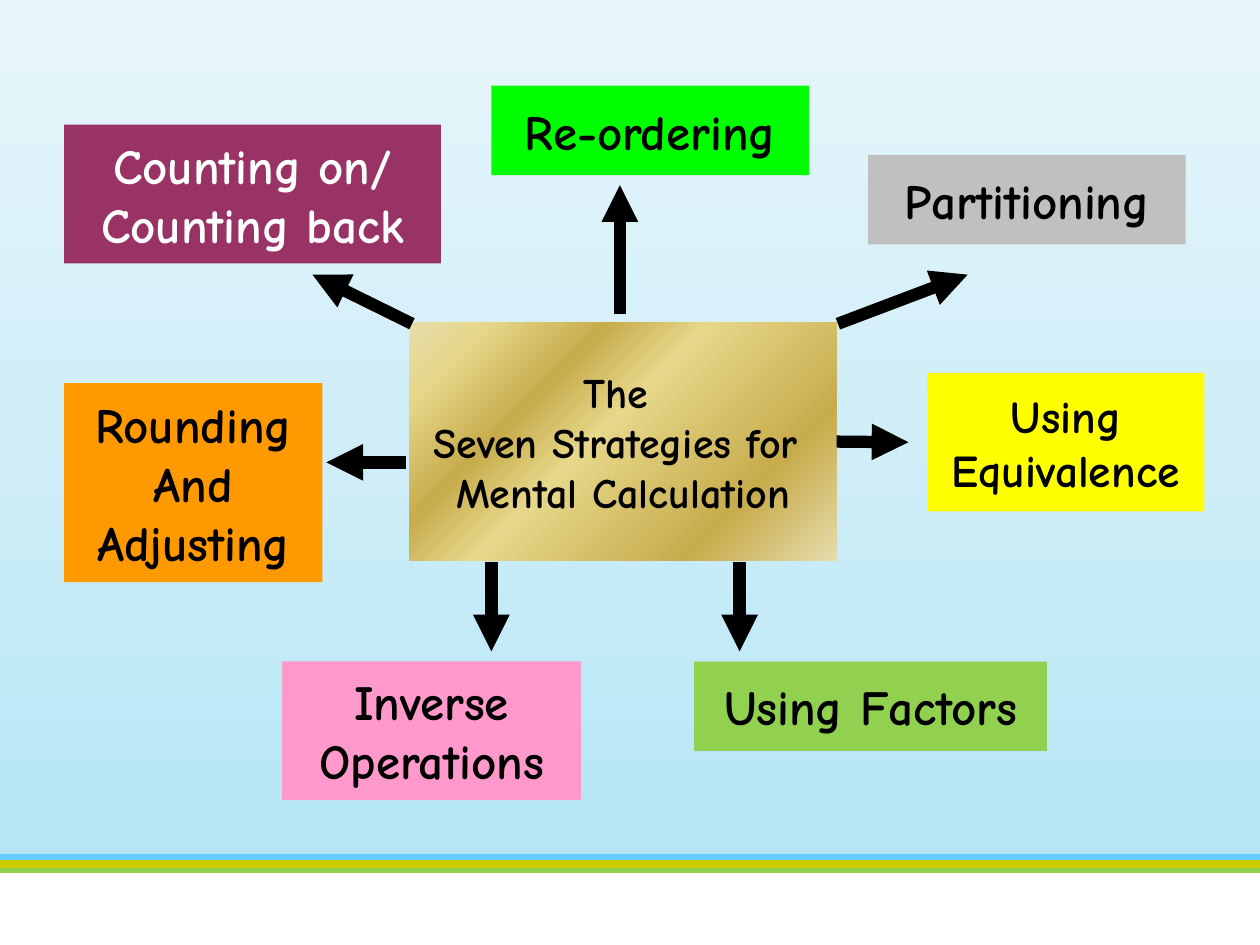
from lxml.etree import SubElement
from pptx import Presentation
from pptx.dml.color import RGBColor
from pptx.enum.shapes import MSO_CONNECTOR, MSO_SHAPE
from pptx.enum.text import MSO_ANCHOR, MSO_AUTO_SIZE, PP_ALIGN
from pptx.oxml.ns import qn
from pptx.util import Inches, Pt

BLACK = RGBColor(0x00, 0x00, 0x00)
WHITE = RGBColor(0xFF, 0xFF, 0xFF)
LEAF = RGBColor(0x92, 0xD0, 0x50)
SKY = RGBColor(0x66, 0xCC, 0xFF)
OLIVE = RGBColor(0xCC, 0xCC, 0x00)
PINK = RGBColor(0xFF, 0x99, 0xCC)
PLUM = RGBColor(0x99, 0x33, 0x66)
GREEN = RGBColor(0x00, 0xFF, 0x00)
ORANGE = RGBColor(0xFF, 0x99, 0x00)
SILVER = RGBColor(0xC0, 0xC0, 0xC0)
YELLOW = RGBColor(0xFF, 0xFF, 0x00)
PALE_GOLD = RGBColor(0xE6, 0xDC, 0xAC)
LIGHT_GOLD = RGBColor(0xE6, 0xD7, 0x8A)
DARK_GOLD = RGBColor(0xC7, 0xAC, 0x4C)

SKY_STOPS = [(0, RGBColor(0xB5, 0xE6, 0xF5)), (50, RGBColor(0xD0, 0xEE, 0xF8)),
             (100, RGBColor(0xE8, 0xF6, 0xFB))]
GOLD_STOPS = [(0, PALE_GOLD), (12, LIGHT_GOLD), (30, DARK_GOLD),
              (45, LIGHT_GOLD), (77, DARK_GOLD), (100, PALE_GOLD)]

# text, (left, top, width, height), fill, font colour, size
STRATEGIES = [
    ("Using Factors", (5.51, 5.25, 2.8, 0.71), LEAF, BLACK, 28),
    ("Inverse Operations", (2.24, 5.25, 2.37, 1.1), PINK, BLACK, 28),
    ("Counting on/\vCounting back", (0.51, 0.99, 2.99, 1.1), PLUM, WHITE, 28),
    ("Re-ordering", (3.9, 0.68, 2.52, 0.71), GREEN, BLACK, 28),
    ("Rounding\vAnd\vAdjusting", (0.51, 3.04, 2.05, 1.58), ORANGE, BLACK, 28),
    ("Partitioning", (6.89, 1.23, 2.52, 0.71), SILVER, BLACK, 28),
    ("Using\vEquivalence", (7.36, 2.96, 2.2, 1.1), YELLOW, BLACK, 26),
]
ARROWS = [
    ((5.87, 4.46), (5.87, 5.17)),
    ((3.9, 4.46), (3.9, 5.17)),
    ((3.27, 2.57), (2.48, 2.18)),
    ((3.22, 3.67), (2.59, 3.67)),
    ((4.92, 2.49), (4.92, 1.47)),
    ((6.65, 2.57), (7.68, 2.18)),
]
EQUIVALENCE_ARROW = ((6.64, 3.51), (7.21, 3.51))
STRIPES = [(6.9, LEAF), (6.81, SKY), (6.86, OLIVE)]


def set_gradient(shape, stops, angle):
    """Fill with (percent, colour) stops; angle is clockwise in degrees."""
    shape.fill.gradient()
    shape.fill.gradient_angle = 360 - angle
    stop_list = shape._element.spPr.find(".//" + qn("a:gsLst"))
    for stop in list(stop_list):
        stop_list.remove(stop)
    for percent, color in stops:
        stop = SubElement(stop_list, qn("a:gs"), pos=str(percent * 1000))
        SubElement(stop, qn("a:srgbClr"), val=str(color))


def set_text(shape, text, size, color):
    frame = shape.text_frame
    frame.text = text
    frame_format = {"word_wrap": True, "auto_size": MSO_AUTO_SIZE.NONE,
                    "vertical_anchor": MSO_ANCHOR.MIDDLE}
    for name, value in frame_format.items():
        setattr(frame, name, value)
    paragraph = frame.paragraphs[0]
    paragraph.alignment = PP_ALIGN.CENTER
    font = paragraph.runs[0].font
    for run in paragraph.runs:
        font = run.font
        font_format = {"name": "Comic Neue", "size": Pt(size), "bold": True}
        for name, value in font_format.items():
            setattr(font, name, value)
        font.color.rgb = color


def add_rectangle(slide, box):
    shape = slide.shapes.add_shape(MSO_SHAPE.RECTANGLE, *map(Inches, box))
    shape.shadow.inherit = False
    shape.line.fill.background()
    return shape


def add_strategy(slide, text, box, fill, color, size):
    shape = add_rectangle(slide, box)
    shape.fill.solid()
    shape.fill.fore_color.rgb = fill
    set_text(shape, text, size, color)


def add_line(slide, start, end, color, width):
    line = slide.shapes.add_connector(MSO_CONNECTOR.STRAIGHT,
                                      *map(Inches, start + end))
    line.line.color.rgb = color
    line.line.width = Pt(width)
    SubElement(line._element.spPr, qn("a:effectLst"))
    return line


def add_arrow(slide, start, end):
    arrow = add_line(slide, start, end, BLACK, 7)
    SubElement(arrow.line._get_or_add_ln(), qn("a:tailEnd"), type="triangle")
    return arrow


def add_backdrop(slide):
    set_gradient(add_rectangle(slide, (0, 0, 10, 6.81)), SKY_STOPS, 270)
    for y, color in STRIPES:
        add_line(slide, (0, y), (10, y), color, 4.5)


def place_title(slide):
    """Format the title placeholder as the hub, in front of the backdrop."""
    title = slide.shapes.title
    box = {"left": 3.25, "top": 2.56, "width": 3.39, "height": 1.89}
    for name, value in box.items():
        setattr(title, name, Inches(value))
    set_gradient(title, GOLD_STOPS, 45)
    set_text(title, "The \vSeven Strategies for \vMental Calculation", 24, BLACK)
    slide.shapes._spTree.append(title._element)
    return title


def main():
    presentation = Presentation()
    presentation.slide_width = Inches(10)
    presentation.slide_height = Inches(7.5)
    slide = presentation.slides.add_slide(presentation.slide_layouts[5])
    add_backdrop(slide)
    title = place_title(slide)
    for strategy in STRATEGIES:
        add_strategy(slide, *strategy)
    for start, end in ARROWS:
        add_arrow(slide, start, end)
    add_arrow(slide, *EQUIVALENCE_ARROW).begin_connect(title, 3)
    presentation.save("out.pptx")


if __name__ == "__main__":
    main()
